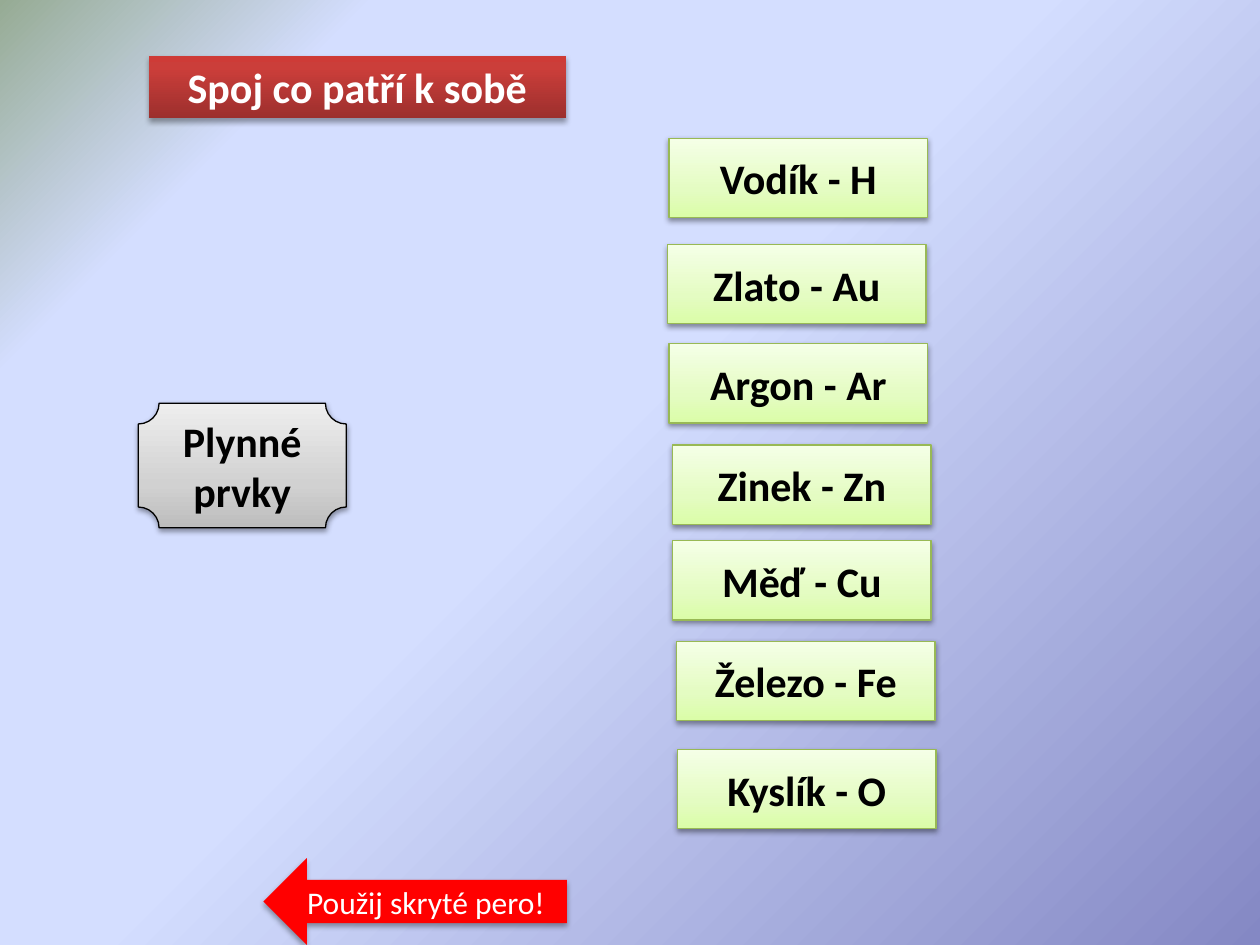
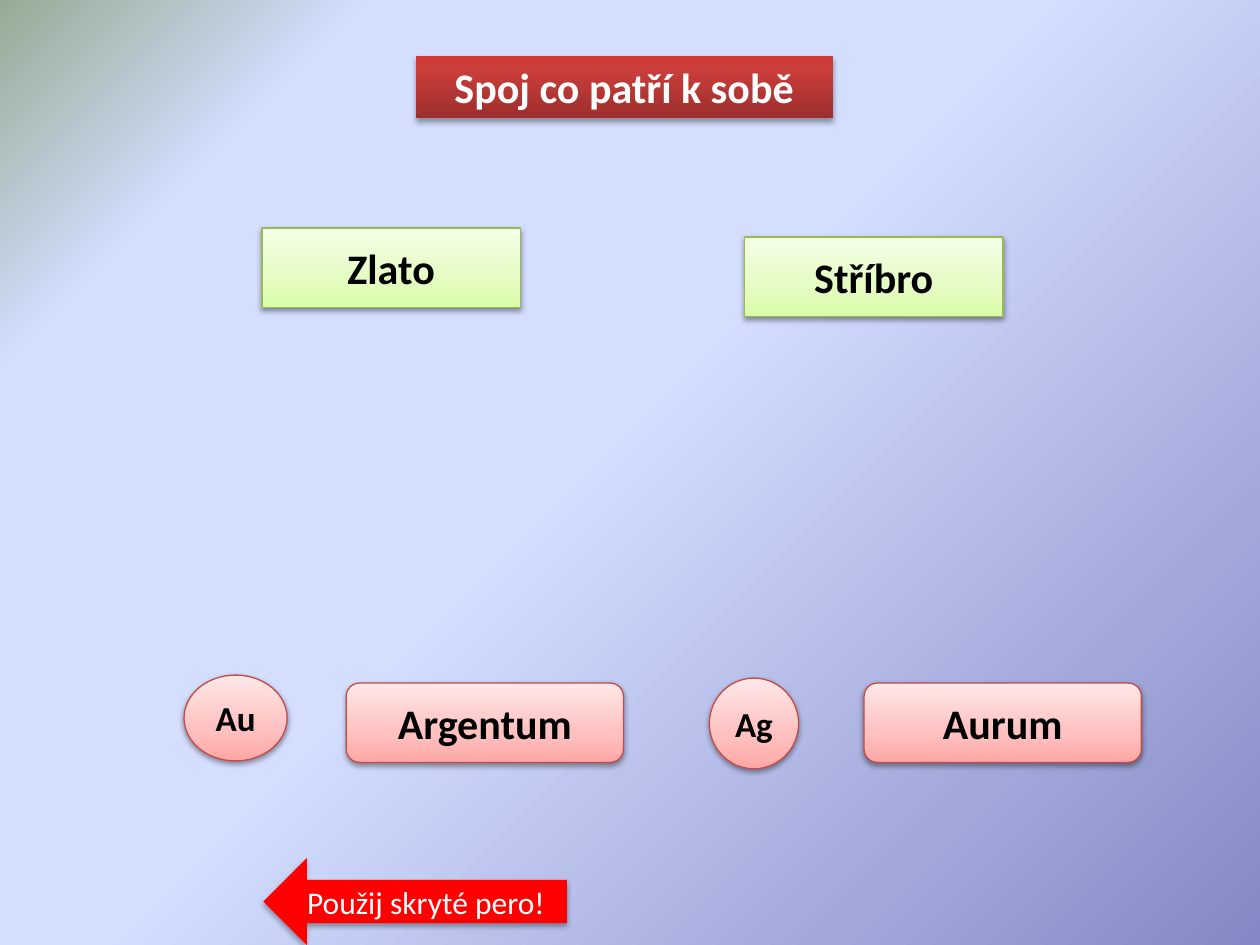
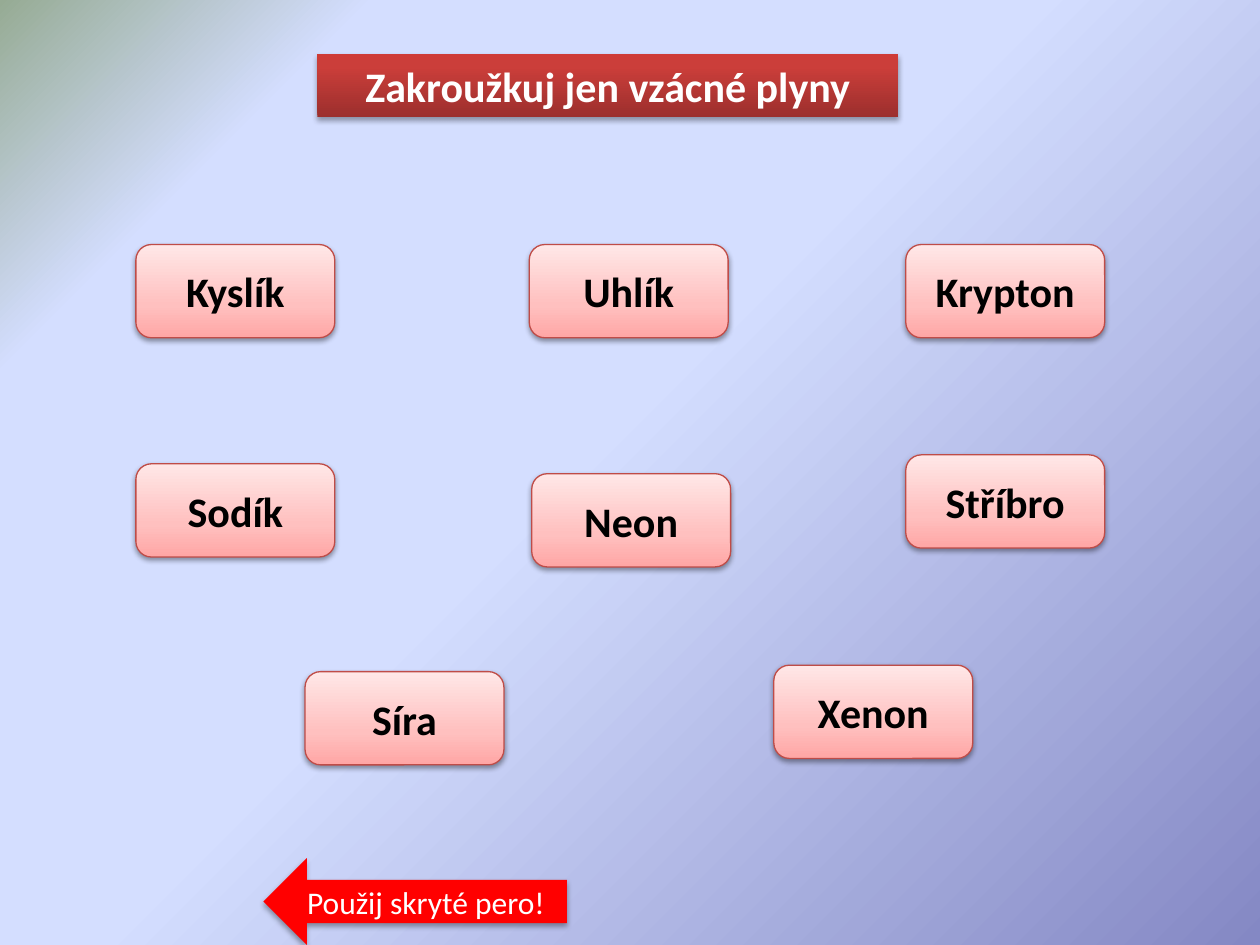
from lxml.etree import SubElement
from pptx import Presentation
from pptx.dml.color import RGBColor
from pptx.enum.shapes import MSO_SHAPE
from pptx.enum.text import MSO_ANCHOR, MSO_AUTO_SIZE, PP_ALIGN
from pptx.oxml.ns import qn
from pptx.util import Cm, Pt

# Colours
BLACK = RGBColor(0x00, 0x00, 0x00)
WHITE = RGBColor(0xFF, 0xFF, 0xFF)
RED = RGBColor(0xFF, 0x00, 0x00)
GREEN_LINE = RGBColor(0x98, 0xB9, 0x55)
PINK_LINE = RGBColor(0xBF, 0x4C, 0x48)

# Gradients: position in percent, colour
SKY = [(0, RGBColor(0x84, 0x88, 0xC4)), (53, RGBColor(0xD4, 0xDE, 0xFF)),
       (83, RGBColor(0xD4, 0xDE, 0xFF)), (100, RGBColor(0x96, 0xAB, 0x94))]
GREEN = [(0, RGBColor(0xDA, 0xFD, 0xA7)), (35, RGBColor(0xE4, 0xFC, 0xC2)),
         (100, RGBColor(0xF5, 0xFF, 0xE7))]
PINK = [(0, RGBColor(0xFF, 0xA6, 0xA5)), (35, RGBColor(0xFF, 0xC0, 0xBF)),
        (100, RGBColor(0xFF, 0xE7, 0xE7))]
GREY = [(0, RGBColor(0xBD, 0xBD, 0xBD)), (35, RGBColor(0xD1, 0xD1, 0xD1)),
        (100, RGBColor(0xEE, 0xEE, 0xEE))]
DARK_RED = [(0, RGBColor(0x9C, 0x2F, 0x2D)), (80, RGBColor(0xCB, 0x3E, 0x3A)),
            (100, RGBColor(0xCE, 0x3B, 0x37))]


def set_gradient(fill, element, stops, circle=False):
    fill.gradient()
    grad = next(element.iter(qn("a:gradFill")))
    for child in list(grad):
        grad.remove(child)
    gs_list = SubElement(grad, qn("a:gsLst"))
    for position, color in stops:
        gs = SubElement(gs_list, qn("a:gs"), pos=str(position * 1000))
        SubElement(gs, qn("a:srgbClr"), val=str(color))
    if circle:
        shade = SubElement(grad, qn("a:path"), {"path": "circle"})
        SubElement(shade, qn("a:fillToRect"), l="100000", t="100000")
    else:
        SubElement(grad, qn("a:lin"), ang="16200000", scaled="0")


def add_box(s, kind, text, x, y, w, h, fill, line=None, size=24):
    sp = s.shapes.add_shape(kind, Cm(x), Cm(y), Cm(w), Cm(h))
    if fill == RED:
        sp.fill.solid()
        sp.fill.fore_color.rgb = RED
    else:
        set_gradient(sp.fill, sp._element.spPr, fill)
    if line is None:
        sp.line.fill.background()
    else:
        sp.line.color.rgb = line
        sp.line.width = Pt(0.75)

    # Soft shadow straight below, a little longer on shapes without outline
    sp.shadow.inherit = False
    effects = sp._element.spPr.find(qn("a:effectLst"))
    shadow = SubElement(effects, qn("a:outerShdw"), blurRad="40000", dir="5400000",
                        dist="20000" if line else "23000", rotWithShape="0")
    color = SubElement(shadow, qn("a:srgbClr"), val=str(BLACK))
    SubElement(color, qn("a:alpha"), val="38000" if line else "35000")

    tf = sp.text_frame
    tf.word_wrap = True
    tf.vertical_anchor = MSO_ANCHOR.MIDDLE
    p = tf.paragraphs[0]
    p.text = text
    p.alignment = PP_ALIGN.CENTER
    p.font.name = "Calibri"
    p.font.size = Pt(size)
    p.font.bold = fill != RED
    p.font.color.rgb = WHITE if line is None else BLACK
    return sp


prs = Presentation()
prs.slide_width, prs.slide_height = Cm(25.4), Cm(19.05)

# Shared background
master = prs.slide_master
set_gradient(master.background.fill, master._element, SKY, circle=True)

# Title band and pen hint on every slide
slides = []
for title, x, y, w in [("Spoj co patří k sobě", 3, 1.12, 8.41),
                       ("Spoj co patří k sobě", 8.38, 1.12, 8.41),
                       ("Zakroužkuj jen vzácné plyny", 6.4, 1.09, 11.71)]:
    s = prs.slides.add_slide(prs.slide_layouts[6])
    sp = add_box(s, MSO_SHAPE.RECTANGLE, title, x, y, w, 1.27, DARK_RED)
    sp.text_frame.vertical_anchor = MSO_ANCHOR.TOP
    sp.text_frame.auto_size = MSO_AUTO_SIZE.SHAPE_TO_FIT_TEXT
    add_box(s, MSO_SHAPE.LEFT_ARROW, "Použij skryté pero!", 5.31, 17.3, 6.12, 1.75,
            RED, size=18)
    slides.append(s)
gases, metals, noble_gases = slides

# Slide 1: gaseous elements
add_box(gases, MSO_SHAPE.PLAQUE, "Plynné prvky", 2.79, 8.13, 4.19, 2.51, GREY, BLACK)

# Green name cards of slides 1 and 2
for s, text, x, y in [(gases, "Vodík - H", 13.49, 2.79),
                      (gases, "Zlato - Au", 13.46, 4.93),
                      (gases, "Argon - Ar", 13.49, 6.93),
                      (gases, "Zinek - Zn", 13.56, 8.97),
                      (gases, "Měď - Cu", 13.56, 10.9),
                      (gases, "Železo - Fe", 13.64, 12.93),
                      (gases, "Kyslík - O", 13.66, 15.11),
                      (metals, "Zlato", 5.28, 4.6),
                      (metals, "Stříbro", 15.01, 4.78)]:
    add_box(s, MSO_SHAPE.RECTANGLE, text, x, y, 5.21, 1.6, GREEN, GREEN_LINE)

# Slide 2: symbols and Latin names
for text, x, y, w, h in [("Au", 3.71, 13.61, 2.08, 1.73), ("Ag", 14.3, 13.67, 1.8, 1.83)]:
    add_box(metals, MSO_SHAPE.OVAL, text, x, y, w, h, PINK, PINK_LINE, size=20)
for text, x in [("Argentum", 6.98), ("Aurum", 17.42)]:
    add_box(metals, MSO_SHAPE.ROUNDED_RECTANGLE, text, x, 13.77, 5.59, 1.6,
            PINK, PINK_LINE)

# Slide 3: elements to choose from
for text, x, y in [("Kyslík", 2.74, 4.93), ("Uhlík", 10.67, 4.93), ("Krypton", 18.26, 4.93),
                   ("Sodík", 2.74, 9.35), ("Neon", 10.72, 9.55), ("Stříbro", 18.26, 9.17),
                   ("Síra", 6.15, 13.54), ("Xenon", 15.6, 13.41)]:
    add_box(noble_gases, MSO_SHAPE.ROUNDED_RECTANGLE, text, x, y, 4.01, 1.88,
            PINK, PINK_LINE)

prs.save("out.pptx")
